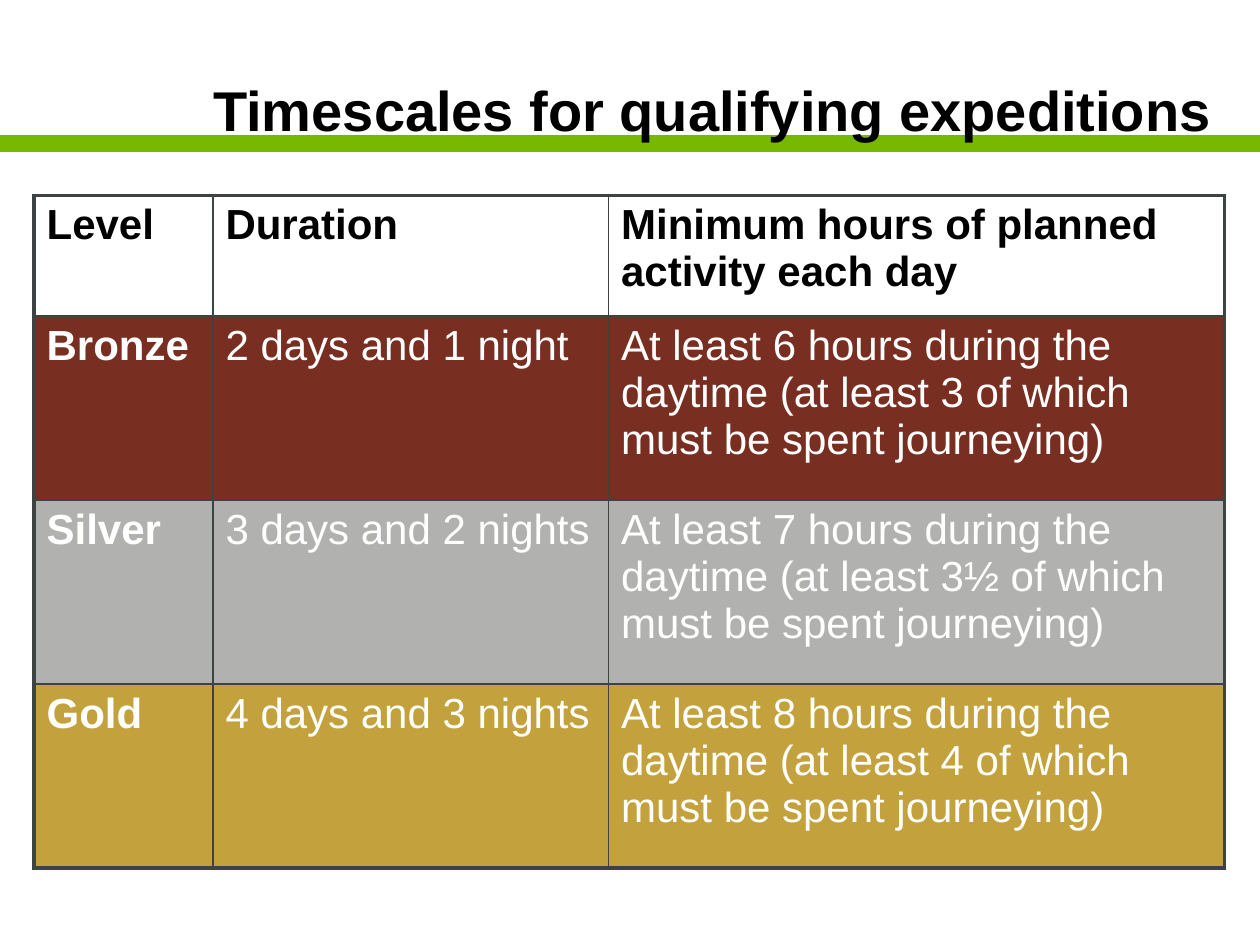
import pptx
import pptx.util
import pptx.dml.color
import pptx.enum.shapes
import pptx.enum.text
import pptx.oxml.ns
from lxml import etree

RGB = pptx.dml.color.RGBColor
Inches, Pt = pptx.util.Inches, pptx.util.Pt

BLACK = RGB(0x00, 0x00, 0x00)
WHITE = RGB(0xFF, 0xFF, 0xFF)
GREEN = RGB(0x76, 0xB9, 0x00)
BORDER = RGB(0x3D, 0x42, 0x42)
BRONZE = RGB(0x78, 0x2F, 0x21)
SILVER = RGB(0xB1, 0xB1, 0xAF)
GOLD = RGB(0xC3, 0xA2, 0x3E)

FONT = "Arial"
LEFT, WIDTH = 0.27, 9.45
TABLE_TOP = 1.55
COLS = [1.42, 3.14, 4.89]
ROWS = [0.96] + [1.46] * 3
OUTER, INNER = 2.25, 1

ACTIVITY = ("At least {} hours during the daytime "
            "(at least {} of which must be spent journeying)")
HEADER = ["Level", "Duration", "Minimum hours of planned activity each day"]
LEVELS = [
    ("Bronze", "2 days and 1 night", "6", "3", BRONZE),
    ("Silver", "3 days and 2 nights", "7", "3½", SILVER),
    ("Gold", "4 days and 3 nights", "8", "4", GOLD),
]


def format_text(tf, size, color, bold):
    for p in tf.paragraphs:
        for r in p.runs:
            r.font.name = FONT
            r.font.size = Pt(size)
            r.font.bold = bold
            r.font.color.rgb = color


def add_rule(s, y):
    line = s.shapes.add_connector(
        pptx.enum.shapes.MSO_CONNECTOR.STRAIGHT,
        0, Inches(y), Inches(10), Inches(y))
    line.line.color.rgb = GREEN
    line.line.width = Pt(10)
    etree.SubElement(line._element.spPr, pptx.oxml.ns.qn("a:effectLst"))


def add_title(s, text):
    box = s.shapes.add_textbox(Inches(LEFT), 0, Inches(WIDTH), Inches(1.15))
    tf = box.text_frame
    tf.word_wrap = True
    tf.vertical_anchor = pptx.enum.text.MSO_ANCHOR.BOTTOM
    tf.margin_bottom = Inches(0.02)
    tf.text = text
    tf.paragraphs[0].alignment = pptx.enum.text.PP_ALIGN.RIGHT
    format_text(tf, 32, BLACK, True)


def set_borders(cell, widths):
    """Draw the left, right, top and bottom borders, widths in points."""
    qn = pptx.oxml.ns.qn
    tcPr = cell._tc.get_or_add_tcPr()
    for side, width in zip("LRTB", widths):
        ln = etree.SubElement(tcPr, qn(f"a:ln{side}"), w=str(Pt(width)))
        fill = etree.SubElement(ln, qn("a:solidFill"))
        etree.SubElement(fill, qn("a:srgbClr"), val=str(BORDER))


def add_table(s, rows, fills):
    table = s.shapes.add_table(
        len(ROWS), len(COLS), Inches(LEFT), Inches(TABLE_TOP),
        Inches(WIDTH), Inches(sum(ROWS))).table
    for column, width in zip(table.columns, COLS):
        column.width = Inches(width)
    for i, (texts, fill) in enumerate(zip(rows, fills)):
        table.rows[i].height = Inches(ROWS[i])
        for j, text in enumerate(texts):
            cell = table.cell(i, j)
            # Outer edges are heavier than the inner grid
            edges = (j == 0, j == len(COLS) - 1, i == 0, i == len(ROWS) - 1)
            set_borders(cell, [OUTER if edge else INNER for edge in edges])
            if fill is None:
                cell.fill.background()
            else:
                cell.fill.solid()
                cell.fill.fore_color.rgb = fill
            cell.text_frame.text = text
            format_text(cell.text_frame, 24, WHITE if fill else BLACK,
                        i == 0 or j == 0)


def main():
    prs = pptx.Presentation()
    prs.slide_width, prs.slide_height = Inches(10), Inches(7.5)
    s = prs.slides.add_slide(prs.slide_layouts[6])

    # Heading over the green rule
    add_rule(s, 1.14)
    add_title(s, "Timescales for qualifying expeditions")

    # One row per award level
    rows = [HEADER] + [[level, duration, ACTIVITY.format(hours, journey)]
                       for level, duration, hours, journey, _ in LEVELS]
    add_table(s, rows, [None] + [level[-1] for level in LEVELS])

    prs.save("out.pptx")


if __name__ == "__main__":
    main()
